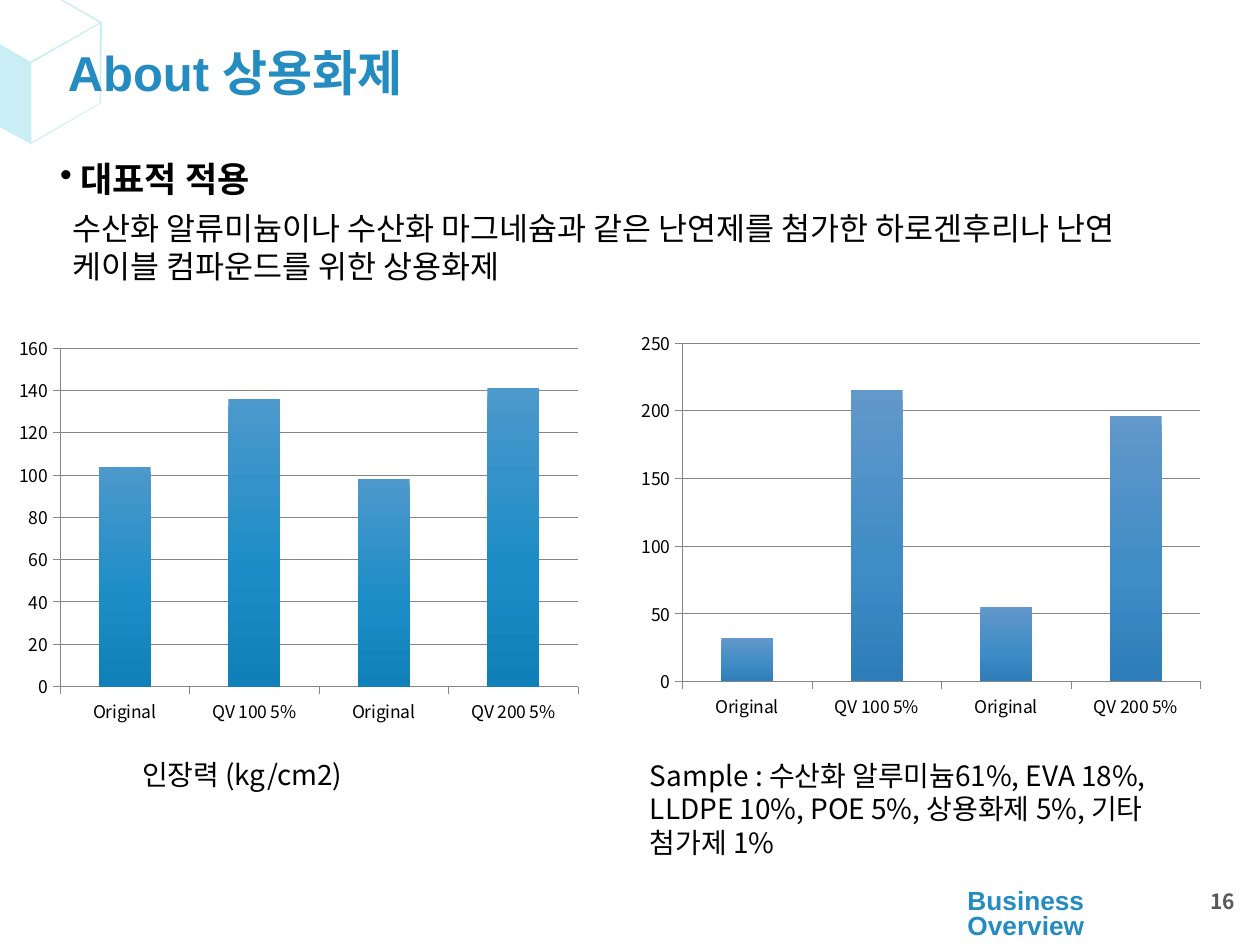
from copy import deepcopy
from dataclasses import dataclass

from lxml import etree
from pptx import Presentation
from pptx.chart.data import CategoryChartData
from pptx.dml.color import RGBColor
from pptx.enum.chart import XL_CHART_TYPE, XL_TICK_MARK
from pptx.enum.text import MSO_ANCHOR, PP_ALIGN
from pptx.oxml.ns import qn
from pptx.slide import Slide
from pptx.util import Inches, Pt

COLUMNS = XL_CHART_TYPE.COLUMN_CLUSTERED
TICK_OUT = XL_TICK_MARK.OUTSIDE
TOP, MIDDLE = MSO_ANCHOR.TOP, MSO_ANCHOR.MIDDLE
LEFT, RIGHT = PP_ALIGN.LEFT, PP_ALIGN.RIGHT


@dataclass(frozen=True)
class Theme:
    accent: str = "248CC1"
    ink: str = "000000"
    muted: str = "595959"
    cube: str = "C9EEF5"
    axis: str = "868686"
    body_font: str = "Noto Sans CJK KR"
    title_font: str = "Arial"
    title: int = 28
    heading: int = 20
    body: int = 18
    caption: int = 16
    footer: int = 15
    page: int = 12
    chart: int = 10


THEME = Theme()


@dataclass(frozen=True)
class Label:
    text: str
    box: tuple[float, float, float, float]
    size: int
    color: str = THEME.ink
    font: str = THEME.body_font
    bold: bool = False
    anchor: MSO_ANCHOR = TOP
    align: PP_ALIGN = LEFT
    spacing: float = 1.0
    bullet_indent: float = 0


@dataclass(frozen=True)
class BarChart:
    left: float
    top: float
    values: tuple[int, ...]
    axis_max: int
    axis_step: int
    gradient: tuple[str, str, str]


LABELS = (
    Label("16", (7.91, 6.95, 1.99, 0.4), THEME.page, THEME.muted,
          bold=True, anchor=MIDDLE, align=RIGHT),
    Label("수산화 알류미늄이나 수산화 마그네슘과 같은 난연제를 첨가한 하로겐후리나 난연 "
          "케이블 컴파운드를 위한 상용화제", (0.48, 1.61, 9.06, 0.71), THEME.body),
    Label("인장력 (kg/cm2)", (1.03, 5.96, 2, 0.37), THEME.caption),
    Label("Sample : 수산화 알루미늄61%, EVA 18%, LLDPE 10%, POE 5%, "
          "상용화제 5%, 기타 첨가제 1%", (5.06, 5.97, 4.62, 0.91), THEME.caption),
    Label("About 상용화제", (0.44, 0.23, 8.78, 0.74), THEME.title, THEME.accent,
          THEME.title_font, bold=True, anchor=MIDDLE, spacing=0.9),
    Label("대표적 적용", (0.38, 1.2, 1.97, 0.44), THEME.heading,
          bold=True, anchor=MIDDLE, bullet_indent=0.16),
    Label("Business Overview", (7.58, 7.11, 2.05, 0.31), THEME.footer, THEME.accent,
          THEME.title_font, bold=True, anchor=MIDDLE, spacing=0.8),
)

SAMPLES = ("Original", "QV 100 5%", "Original", "QV 200 5%")
CHART_SIZE = (4.62, 3.21)
CHARTS = (
    BarChart(0.06, 2.6, (104, 136, 98, 141), 160, 20, ("4D99CC", "1B8CC6", "1080B8")),
    BarChart(5, 2.56, (32, 215, 55, 196), 250, 50, ("6298CA", "3F8CC6", "2D7DB8")),
)

# Cube cut by the slide corner, in hundredths of an inch:
# silhouette, then the hollow right face
CUBE_UNIT = Inches(0.01)
CUBE_OUTLINE = ((24, 115), (25, 114), (80, 82), (81, 18), (80, 17), (50, 0),
                (48, 0), (79, 18), (24, 49), (0, 35), (0, 101), (24, 114))
CUBE_FACE = ((25, 50), (79, 19), (79, 82), (25, 113))


def rgb(value: str) -> RGBColor:
    return RGBColor.from_string(value)


def add_cube(slide: Slide) -> None:
    builder = slide.shapes.build_freeform(*CUBE_OUTLINE[0], scale=CUBE_UNIT)
    builder.add_line_segments(CUBE_OUTLINE[1:], close=True)
    builder.move_to(*CUBE_FACE[0])
    builder.add_line_segments(CUBE_FACE[1:], close=True)
    cube = builder.convert_to_shape()
    cube.shadow.inherit = False
    cube.fill.solid()
    cube.fill.fore_color.rgb = rgb(THEME.cube)
    cube.line.fill.background()


def add_label(slide: Slide, label: Label) -> None:
    frame = slide.shapes.add_textbox(*map(Inches, label.box)).text_frame
    frame.word_wrap = True
    frame.vertical_anchor = label.anchor
    paragraph = frame.paragraphs[0]
    paragraph.alignment = label.align
    paragraph.line_spacing = label.spacing
    if label.bullet_indent:
        properties = paragraph._p.get_or_add_pPr()
        indent = Inches(label.bullet_indent)
        properties.set("marL", str(indent))
        properties.set("indent", str(-indent))
        etree.SubElement(properties, qn("a:buChar")).set("char", "•")
    run = paragraph.add_run()
    run.text = label.text
    run.font.size = Pt(label.size)
    run.font.bold = label.bold
    run.font.color.rgb = rgb(label.color)
    run.font.name = label.font
    east_asian = etree.SubElement(run._r.get_or_add_rPr(), qn("a:ea"))
    east_asian.set("typeface", THEME.body_font)


def add_bar_chart(slide: Slide, spec: BarChart) -> None:
    data = CategoryChartData()
    data.categories = SAMPLES
    data.add_series("Series 1", spec.values)
    box = map(Inches, (spec.left, spec.top, *CHART_SIZE))
    chart = slide.shapes.add_chart(COLUMNS, *box, data).chart
    chart.has_legend = False
    chart.has_title = False
    chart.font.name = THEME.body_font
    chart.font.size = Pt(THEME.chart)
    chart.font.color.rgb = rgb(THEME.ink)

    # Axes and gridlines
    values = chart.value_axis
    values.minimum_scale, values.maximum_scale = 0, spec.axis_max
    values.major_unit = spec.axis_step
    values.has_major_gridlines = True
    for axis in (chart.category_axis, values):
        axis.major_tick_mark = TICK_OUT
    for part in (chart.category_axis, values, values.major_gridlines):
        part.format.line.color.rgb = rgb(THEME.axis)
        part.format.line.width = Pt(0.5)

    # Bars shaded from top to bottom
    plot = chart.plots[0]
    plot.vary_by_categories = False
    plot.gap_width = 150
    bars = plot.series[0]
    bars.invert_if_negative = False
    fill = bars.format.fill
    fill.gradient()
    fill.gradient_angle = 270
    stop_list = next(bars._element.iter(qn("a:gsLst")))
    stop_list.insert(1, deepcopy(stop_list[0]))
    for stop, position, color in zip(fill.gradient_stops, (0, 0.6, 1), spec.gradient):
        stop.position = position
        stop.color.rgb = rgb(color)


def main() -> None:
    deck = Presentation()
    deck.slide_width, deck.slide_height = Inches(10), Inches(7.5)
    slide = deck.slides.add_slide(deck.slide_layouts[6])
    add_cube(slide)
    for chart in CHARTS:
        add_bar_chart(slide, chart)
    for label in LABELS:
        add_label(slide, label)
    deck.save("out.pptx")


if __name__ == "__main__":
    main()
